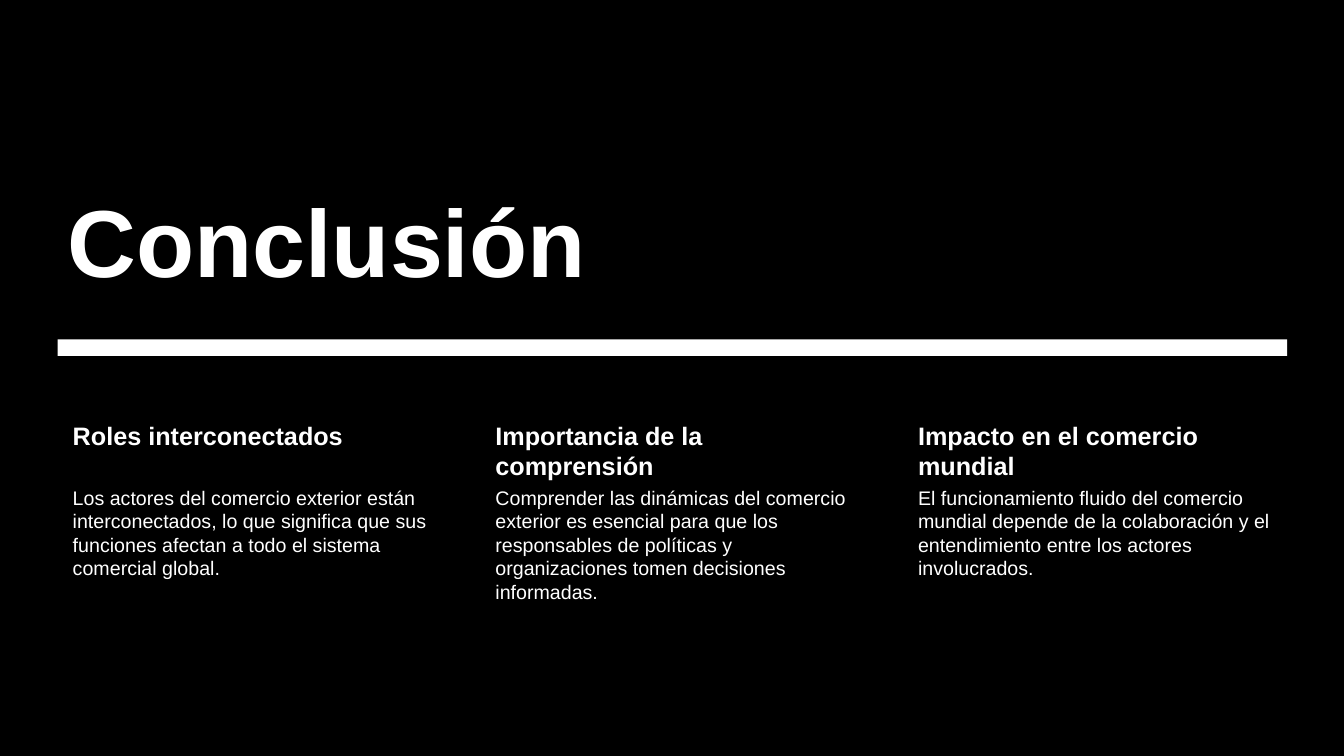
from dataclasses import dataclass

from pptx import Presentation
from pptx import util as u
from pptx.dml.color import RGBColor
from pptx.enum import shapes, text
from pptx.slide import Slide
from pptx.text.text import TextFrame

Pt = u.Pt
BLACK = "000000"
WHITE = "FFFFFF"
FONT = "Arial"
SLIDE_WIDTH = 960
SLIDE_HEIGHT = 540
MARGIN = 41.2
CONTENT_WIDTH = 878.2
COLUMN_WIDTH = 274.4
COLUMN_PITCH = (CONTENT_WIDTH - COLUMN_WIDTH) / 2


@dataclass
class Conclusion:
    heading: str
    body: str


@dataclass
class TextStyle:
    top: float
    height: float
    inset: float
    size: float
    bold: bool


HEADING = TextStyle(top=298, height=47.5, inset=2.2, size=18, bold=True)
BODY = TextStyle(top=345.5, height=147, inset=1.4, size=14, bold=False)

CONCLUSIONS = [
    Conclusion(
        "Roles interconectados",
        "Los actores del comercio exterior están interconectados, lo que significa "
        "que sus funciones afectan a todo el sistema comercial global.",
    ),
    Conclusion(
        "Importancia de la comprensión",
        "Comprender las dinámicas del comercio exterior es esencial para que los "
        "responsables de políticas y organizaciones tomen decisiones informadas.",
    ),
    Conclusion(
        "Impacto en el comercio mundial",
        "El funcionamiento fluido del comercio mundial depende de la colaboración "
        "y el entendimiento entre los actores involucrados.",
    ),
]


def color(value: str) -> RGBColor:
    return RGBColor.from_string(value)


def write(frame: TextFrame, content: str, size: float, bold: bool) -> None:
    frame.text = content
    frame.word_wrap = True
    frame.auto_size = text.MSO_AUTO_SIZE.NONE
    paragraph = frame.paragraphs[0]
    paragraph.alignment = text.PP_ALIGN.LEFT
    for run in paragraph.runs:
        run.font.name = FONT
        run.font.size = Pt(size)
        run.font.bold = bold
        run.font.color.rgb = color(WHITE)


def add_rectangle(slide: Slide, left: float, top: float, width: float,
                  height: float, fill: str) -> None:
    shape = slide.shapes.add_shape(
        shapes.MSO_SHAPE.RECTANGLE, Pt(left), Pt(top), Pt(width), Pt(height))
    shape.shadow.inherit = False
    shape.fill.solid()
    shape.fill.fore_color.rgb = color(fill)
    shape.line.fill.background()


def add_title(slide: Slide, content: str) -> None:
    title = slide.shapes.title
    title.left, title.top = Pt(MARGIN), Pt(104.4)
    title.width, title.height = Pt(CONTENT_WIDTH), Pt(111)
    write(title.text_frame, content, 68, True)
    title.text_frame.vertical_anchor = text.MSO_ANCHOR.BOTTOM
    slide.shapes.element.append(title.element)


def add_text(slide: Slide, left: float, content: str, style: TextStyle) -> None:
    shape = slide.shapes.add_textbox(
        Pt(left), Pt(style.top), Pt(COLUMN_WIDTH), Pt(style.height))
    frame = shape.text_frame
    write(frame, content, style.size, style.bold)
    frame.margin_left = Pt(10.8)
    frame.margin_top = frame.margin_right = frame.margin_bottom = Pt(style.inset)


def main() -> None:
    presentation = Presentation()
    presentation.slide_width = Pt(SLIDE_WIDTH)
    presentation.slide_height = Pt(SLIDE_HEIGHT)
    slide = presentation.slides.add_slide(presentation.slide_layouts[5])
    slide.background.fill.solid()
    slide.background.fill.fore_color.rgb = color(BLACK)

    add_rectangle(slide, 0, 0, SLIDE_WIDTH, SLIDE_HEIGHT, BLACK)
    add_rectangle(slide, MARGIN, 242.4, CONTENT_WIDTH, 11.8, WHITE)
    add_title(slide, "Conclusión")
    for index, conclusion in enumerate(CONCLUSIONS):
        left = MARGIN + index * COLUMN_PITCH
        add_text(slide, left, conclusion.heading, HEADING)
        add_text(slide, left, conclusion.body, BODY)

    presentation.save("out.pptx")


if __name__ == "__main__":
    main()
